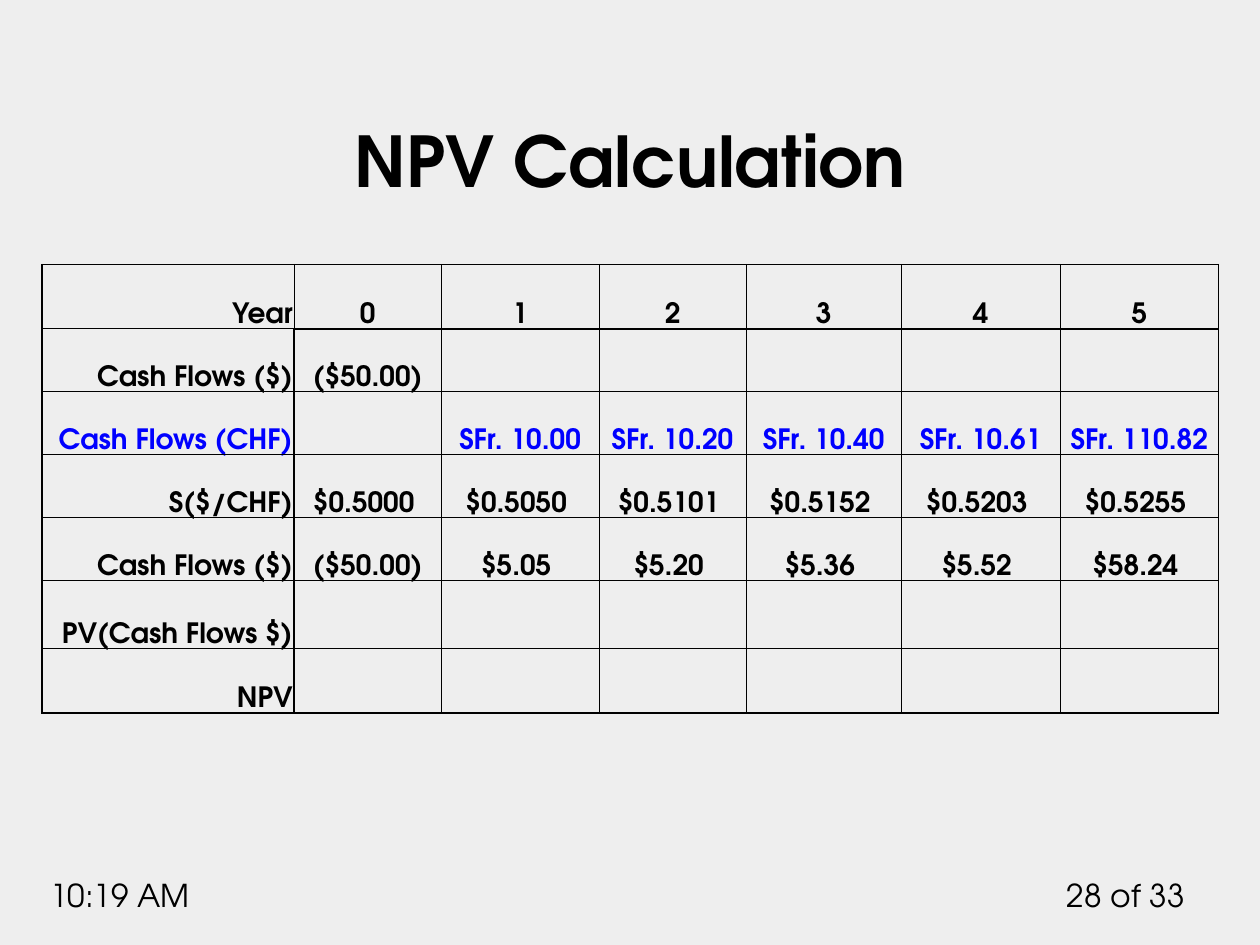
from lxml import etree
from pptx import Presentation
from pptx.dml.color import RGBColor
from pptx.enum.text import MSO_ANCHOR, PP_ALIGN
from pptx.oxml.ns import qn
from pptx.util import Inches, Pt

LEFT, CENTER, RIGHT = PP_ALIGN.LEFT, PP_ALIGN.CENTER, PP_ALIGN.RIGHT
BOTTOM = MSO_ANCHOR.BOTTOM
TITLE_ONLY = 5
WIDTH, HEIGHT = 10, 7.5
THIN, THICK = 0.5, 1

COLUMN_WIDTHS = [2, 1.17, 1.25, 1.17, 1.23, 1.26, 1.26]
ROW_HEIGHTS = [0.51, 0.5, 0.5, 0.5, 0.5, 0.54, 0.51]
CHF_ROW = 2
ROWS = [
    ["Year", "0", "1", "2", "3", "4", "5"],
    ["Cash Flows ($)", "($50.00)"],
    ["Cash Flows (CHF)", "", "SFr. 10.00", "SFr. 10.20", "SFr. 10.40",
     "SFr. 10.61", "SFr. 110.82"],
    ["S($/CHF)", "$0.5000 ", "$0.5050 ", "$0.5101 ", "$0.5152 ", "$0.5203 ", "$0.5255 "],
    ["Cash Flows ($)", "($50.00)", "$5.05 ", "$5.20 ", "$5.36 ", "$5.52 ", "$58.24 "],
    ["PV(Cash Flows $)"],
    ["NPV"],
]


def color(value):
    return RGBColor.from_string(value)


def vertical_line(row, edge):
    outer = edge in (0, len(COLUMN_WIDTHS))
    return THICK if outer or (edge == 1 and row > 0) else THIN


def horizontal_line(edge, column):
    outer = edge in (0, len(ROW_HEIGHTS))
    return THICK if outer or (edge == 1 and column > 0) else THIN


class SlideBuilder:
    font = "TeX Gyre Adventor"
    ink = "000000"
    accent = "0000FF"
    paper = "EEEEEE"

    def __init__(self, presentation):
        self.slide = presentation.slides.add_slide(presentation.slide_layouts[TITLE_ONLY])
        fill = self.slide.background.fill
        fill.solid()
        fill.fore_color.rgb = color(self.paper)

    def box(self, left, top, width, height):
        return (Inches(left * WIDTH), Inches(top * HEIGHT),
                Inches(width * WIDTH), Inches(height * HEIGHT))

    def set_text(self, text_frame, text, size, align, bold=False, ink=None):
        text_frame.text = text
        paragraph = text_frame.paragraphs[0]
        paragraph.alignment = align
        font = paragraph.runs[0].font if paragraph.runs else paragraph.font
        font.name = self.font
        font.size = Pt(size)
        font.bold = bold
        font.color.rgb = color(ink or self.ink)

    def title(self, text, *place):
        shape = self.slide.shapes.title
        shape.left, shape.top, shape.width, shape.height = self.box(*place)
        shape.text_frame.vertical_anchor = BOTTOM
        self.set_text(shape.text_frame, text, 40, CENTER, bold=True)

    def label(self, text, align, *place):
        shape = self.slide.shapes.add_textbox(*self.box(*place))
        shape.text_frame.word_wrap = True
        self.set_text(shape.text_frame, text, 18, align)

    def border(self, cell, side, width):
        line = etree.SubElement(cell._tc.get_or_add_tcPr(), qn(f"a:ln{side}"), w=str(Pt(width)))
        fill = etree.SubElement(line, qn("a:solidFill"))
        etree.SubElement(fill, qn("a:srgbClr"), val=self.ink)

    def table(self, rows, left, top):
        place = self.box(left, top, sum(COLUMN_WIDTHS) / WIDTH, sum(ROW_HEIGHTS) / HEIGHT)
        table = self.slide.shapes.add_table(len(ROW_HEIGHTS), len(COLUMN_WIDTHS), *place).table
        table.first_row = table.horz_banding = False
        for column, width in zip(table.columns, COLUMN_WIDTHS):
            column.width = Inches(width)
        for row_index, (row, height, texts) in enumerate(zip(table.rows, ROW_HEIGHTS, rows)):
            row.height = Inches(height)
            for column_index, cell in enumerate(row.cells):
                text = texts[column_index] if column_index < len(texts) else ""
                self.cell(cell, text, row_index, column_index)

    def cell(self, cell, text, row, column):
        cell.margin_left = cell.margin_right = cell.margin_top = Inches(0.01)
        cell.margin_bottom = 0
        cell.vertical_anchor = BOTTOM
        self.border(cell, "L", vertical_line(row, column))
        self.border(cell, "R", vertical_line(row, column + 1))
        self.border(cell, "T", horizontal_line(row, column))
        self.border(cell, "B", horizontal_line(row + 1, column))
        cell.fill.background()
        self.set_text(cell.text_frame, text, 16, CENTER if column else RIGHT, bold=True,
                      ink=self.accent if row == CHF_ROW else self.ink)


def main():
    presentation = Presentation()
    presentation.slide_width = Inches(WIDTH)
    presentation.slide_height = Inches(HEIGHT)
    builder = SlideBuilder(presentation)
    builder.label("28 of 33", RIGHT, 0.83, 0.92, 0.12, 0.05)
    builder.label("10:19 AM", LEFT, 0.03, 0.92, 0.16, 0.05)
    builder.title("NPV Calculation", 0.05, 0.05, 0.9, 0.17)
    builder.table(ROWS, 1 / 30, 0.28)
    presentation.save("out.pptx")


if __name__ == "__main__":
    main()
